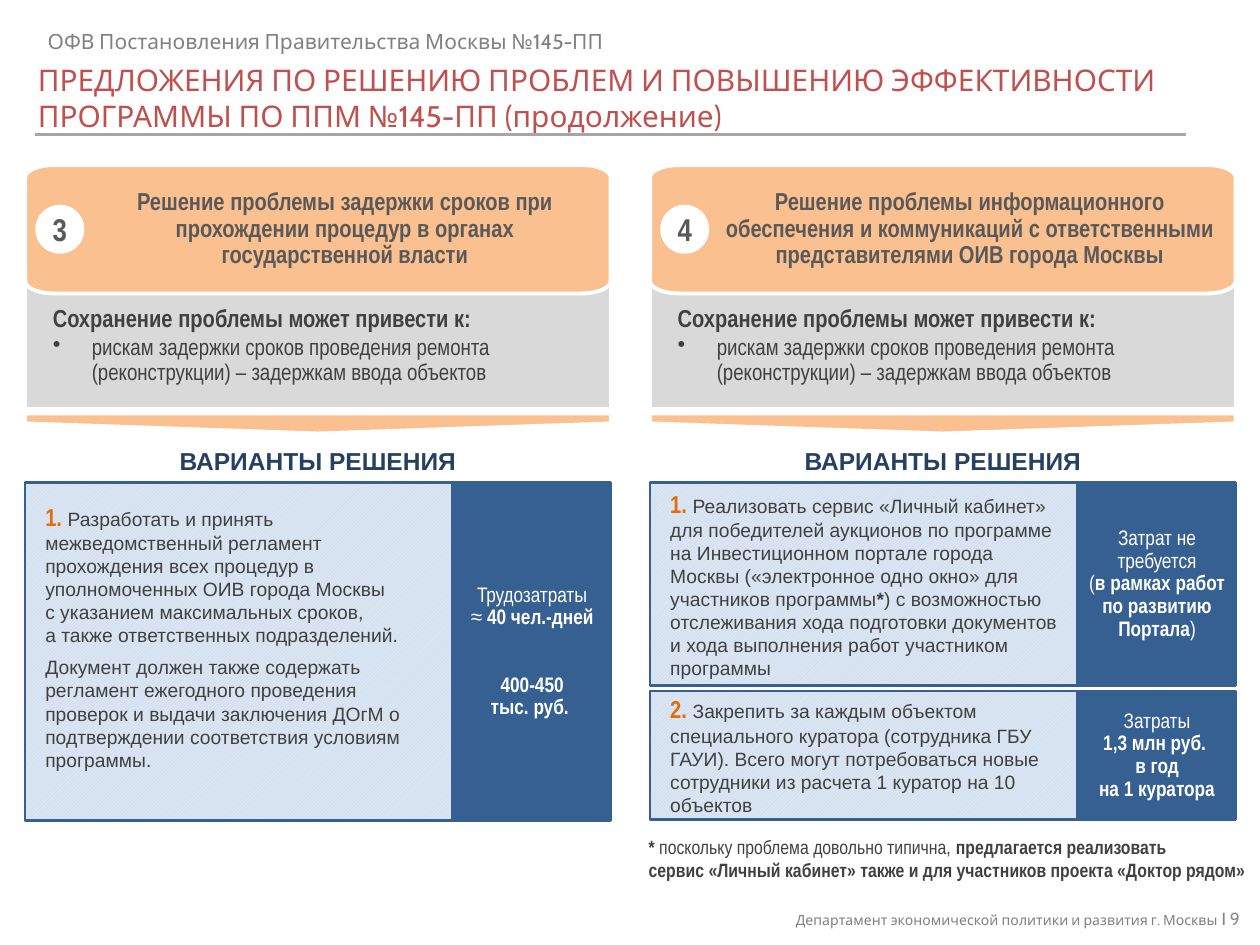
from dataclasses import dataclass
from math import cos, pi, sin
from typing import Optional

from lxml import etree
from pptx import Presentation
from pptx.dml.color import RGBColor
from pptx.enum.dml import MSO_PATTERN
from pptx.enum.shapes import MSO_CONNECTOR, MSO_SHAPE
from pptx.enum.text import MSO_ANCHOR, MSO_AUTO_SIZE, PP_ALIGN
from pptx.oxml.ns import qn
from pptx.util import Pt

LEFT, CENTER, RIGHT = PP_ALIGN.LEFT, PP_ALIGN.CENTER, PP_ALIGN.RIGHT
TOP, MIDDLE = MSO_ANCHOR.TOP, MSO_ANCHOR.MIDDLE
RECTANGLE, PENTAGON, OVAL = MSO_SHAPE.RECTANGLE, MSO_SHAPE.PENTAGON, MSO_SHAPE.OVAL
HATCH = MSO_PATTERN.LIGHT_UPWARD_DIAGONAL

CABIN, ARIAL, NARROW = "Cabin", "Arial", "Arial Narrow"
WHITE, GRAY, DARK, ORANGE, BLUE = "FFFFFF", "808080", "404040", "FAC090", "376092"

COLUMN_LEFTS = (14.4, 371.5)
COLUMN_WIDTH = 334.6
OPTION_WIDTH = 244
COST_WIDTH = 90.6


@dataclass
class Span:
    text: str
    bold: Optional[bool] = None
    size: Optional[float] = None
    font: Optional[str] = None
    color: Optional[str] = None


@dataclass
class Para:
    spans: list
    size: float
    font: str
    color: str
    bold: bool = False
    align: PP_ALIGN = LEFT
    line_spacing: Optional[float] = None
    after: float = 0
    margin: float = 0
    indent: float = 0
    bullet: str = ""


@dataclass
class Option:
    top: float
    height: float
    text: list
    cost: list
    bottom_inset: float = 5.8


@dataclass
class Column:
    number: str
    heading: str
    options: list


def rgb(value):
    return RGBColor.from_string(value)


def set_font(font, item):
    if item.size:
        font.size = Pt(item.size)
    if item.font:
        font.name = item.font
    if item.color:
        font.color.rgb = rgb(item.color)
    if item.bold is not None:
        font.bold = item.bold


def write(shape, paras, insets=(7.2, 3.6, 7.2, 3.6), anchor=TOP):
    frame = shape.text_frame
    frame.word_wrap, frame.auto_size = True, MSO_AUTO_SIZE.NONE
    frame.vertical_anchor = anchor
    frame.margin_left, frame.margin_top, frame.margin_right, frame.margin_bottom = map(Pt, insets)
    for index, para in enumerate(paras):
        paragraph = frame.add_paragraph() if index else frame.paragraphs[0]
        paragraph.alignment = para.align
        paragraph.space_after = Pt(para.after)
        if para.line_spacing:
            paragraph.line_spacing = para.line_spacing
        set_font(paragraph.font, para)
        properties = paragraph._p.get_or_add_pPr()
        if para.margin:
            properties.set("marL", str(Pt(para.margin)))
            properties.set("indent", str(Pt(para.indent)))
        if para.bullet:
            bullet = etree.Element(qn("a:buChar"), char=para.bullet)
            properties.find(qn("a:defRPr")).addprevious(bullet)
        for span in para.spans:
            for line_index, line in enumerate(span.text.split("\n")):
                if line_index:
                    paragraph.add_line_break()
                if line:
                    run = paragraph.add_run()
                    run.text = line
                    set_font(run.font, span)


def style(shape, fill, line=None, weight=2.25):
    shape.shadow.inherit = False
    shape.fill.solid()
    shape.fill.fore_color.rgb = rgb(fill)
    if line:
        shape.line.color.rgb = rgb(line)
        shape.line.width = Pt(weight)
    else:
        shape.line.fill.background()


def add_box(slide, kind, box, fill, line=None, weight=2.25):
    shape = slide.shapes.add_shape(kind, *map(Pt, box))
    style(shape, fill, line, weight)
    return shape


def add_text(slide, box, paras, **layout):
    write(slide.shapes.add_textbox(*map(Pt, box)), paras, **layout)


def add_header(slide, left, top, width, height):
    """Block with elliptical corners, each sampled in short steps."""
    radius_x, radius_y, steps = 16.6, 7.2, 12
    centers = [(left + width - radius_x, top + height - radius_y), (left + radius_x, top + height - radius_y),
               (left + radius_x, top + radius_y), (left + width - radius_x, top + radius_y)]
    points = []
    for quarter, (x, y) in enumerate(centers):
        for step in range(steps + 1):
            angle = (quarter + step / steps) * pi / 2
            points.append((Pt(x + radius_x * cos(angle)), Pt(y + radius_y * sin(angle))))
    builder = slide.shapes.build_freeform(*points[0])
    builder.add_line_segments(points[1:], close=True)
    shape = builder.convert_to_shape()
    style(shape, ORANGE, WHITE)
    return shape


def add_option(slide, left, option):
    cost = add_box(slide, RECTANGLE, (left + OPTION_WIDTH, option.top, COST_WIDTH, option.height), BLUE, BLUE, 1.5)
    write(cost, option.cost, (5.8, 2.9, 5.0, 2.9), MIDDLE)
    panel = add_box(slide, PENTAGON, (left, option.top, OPTION_WIDTH, option.height), WHITE, BLUE, 1.5)
    panel.adjustments[0] = 0
    panel.fill.patterned()
    panel.fill.pattern = HATCH
    panel.fill.fore_color.rgb, panel.fill.back_color.rgb = rgb("C0D5EE"), rgb("DCE6F2")
    write(panel, option.text, (11.5, 5.8, 8.6, option.bottom_inset), MIDDLE)


def add_column(slide, left, column):
    # Arrow is a pentagon turned to point down
    arrow_height, arrow_middle = 11.5, 242
    arrow = add_box(slide, PENTAGON, (left + (COLUMN_WIDTH - arrow_height) / 2, arrow_middle - COLUMN_WIDTH / 2,
                                      arrow_height, COLUMN_WIDTH), ORANGE, WHITE)
    arrow.rotation = 90
    # Risks
    risks = add_box(slide, RECTANGLE, (left, 163.4, COLUMN_WIDTH, 70.6), "D9D9D9", WHITE)
    write(risks, [
        Para([Span("Сохранение проблемы может привести к:")], 14, NARROW, DARK, True,
             line_spacing=0.9, after=2, margin=22.3, indent=-15.1),
        Para([Span("рискам задержки сроков проведения ремонта (реконструкции) – задержкам ввода объектов")],
             13, NARROW, DARK, line_spacing=0.9, after=2, margin=29.5, indent=-22.3, bullet="•"),
    ], (8.6, 11.5, 8.6, 5.8))
    # Numbered heading
    header = add_header(slide, left, 94.3, COLUMN_WIDTH, 73.4)
    write(header, [Para([Span(column.heading)], 14, NARROW, "595959", True, CENTER, 0.9)],
          (36.7, 2.2, 5.8, 2.2), MIDDLE)
    badge = add_box(slide, OVAL, (left + 5.8, 117, 28, 28), WHITE)
    write(badge, [Para([Span(column.number)], 18, NARROW, "595959", True, CENTER)], (0, 0, 0, 0), MIDDLE)
    # Options
    for option in column.options:
        add_option(slide, left, option)
    add_text(slide, (left, 252.4, COLUMN_WIDTH, 23.8),
             [Para([Span("ВАРИАНТЫ РЕШЕНИЯ")], 14, ARIAL, "254061", True, CENTER, 0.9)],
             insets=(0, 0, 0, 0), anchor=MIDDLE)


def body(*spans):
    return Para(list(spans), 11, ARIAL, DARK, after=5)


def cost_para(*spans, after=6):
    return Para(list(spans), 12, NARROW, WHITE, align=CENTER, line_spacing=0.9, after=after)


def number(text):
    return Span(text, True, 14, NARROW, "E46C0A")


COLUMNS = [
    Column("3", "Решение проблемы задержки сроков при прохождении процедур в органах государственной власти", [
        Option(275.8, 193, [
            body(number("1. "), Span("Разработать и принять межведомственный регламент прохождения всех процедур в уполномоченных ОИВ города Москвы\nс указанием максимальных сроков, \nа также ответственных подразделений.")),
            body(Span("Документ должен также содержать регламент ежегодного проведения проверок и выдачи заключения ДОгМ о подтверждении соответствия условиям программы."))],
            [cost_para(Span("Трудозатраты\n≈ "), Span("40 чел.-дней", True), after=25.5),
             cost_para(Span("400-450\nтыс. руб. ", True))], bottom_inset=23)]),
    Column("4", "Решение проблемы информационного обеспечения и коммуникаций с ответственными представителями ОИВ города Москвы", [
        Option(275.8, 116, [
            body(number("1. "), Span("Реализовать сервис «Личный кабинет» для победителей аукционов по программе на Инвестиционном портале города Москвы («электронное одно окно» для участников программы"),
                 Span("*", True), Span(") с возможностью отслеживания хода подготовки документов и хода выполнения работ участником программы"))],
            [cost_para(Span("Затрат не требуется\n("), Span("в рамках работ по развитию Портала", True), Span(")"))]),
        Option(394.8, 73.6, [
            body(number("2. "), Span("Закрепить за каждым объектом специального куратора (сотрудника ГБУ ГАУИ). Всего могут потребоваться новые сотрудники из расчета 1 куратор на 10 объектов"))],
            [cost_para(Span("Затраты\n"), Span("1,3 млн руб. \nв год\nна 1 куратора", True))])]),
]


def main():
    presentation = Presentation()
    presentation.slide_width, presentation.slide_height = Pt(720), Pt(540)
    slide = presentation.slides.add_slide(presentation.slide_layouts[5])

    # Title, section name and rule
    title = slide.shapes.title
    title.left, title.top, title.width, title.height = map(Pt, (14.4, 31.7, 697.7, 48.2))
    write(title, [Para([Span("ПРЕДЛОЖЕНИЯ ПО РЕШЕНИЮ ПРОБЛЕМ И ПОВЫШЕНИЮ ЭФФЕКТИВНОСТИ ПРОГРАММЫ ПО ППМ №145-ПП (продолжение)")],
                       17, CABIN, "C0504D")])
    add_text(slide, (20.2, 13, 521.3, 21.6),
             [Para([Span("ОФВ Постановления Правительства Москвы №145-ПП")], 12, CABIN, GRAY)])
    rule = slide.shapes.add_connector(MSO_CONNECTOR.STRAIGHT, Pt(20.2), Pt(77), Pt(677.5), Pt(77))
    rule.line.color.rgb, rule.line.width = rgb("A6A6A6"), Pt(1.5)
    etree.SubElement(rule._element.spPr, qn("a:effectLst"))

    for left, column in zip(COLUMN_LEFTS, COLUMNS):
        add_column(slide, left, column)

    # Footnote and footer
    add_text(slide, (363.6, 473.8, 360, 33.8), [Para([
        Span("* ", True), Span("поскольку проблема довольно типична, "),
        Span("предлагается реализовать\nсервис «Личный кабинет» также и для участников проекта «Доктор рядом»", True),
    ], 11, NARROW, DARK)])
    add_text(slide, (361.4, 519.1, 354.2, 11.5), [Para([
        Span("Департамент экономической политики и развития г. Москвы ", size=8),
        Span("I "), Span("9", color="8C8C8C")], 10, CABIN, GRAY, align=RIGHT)], anchor=MIDDLE)

    presentation.save("out.pptx")


if __name__ == "__main__":
    main()
